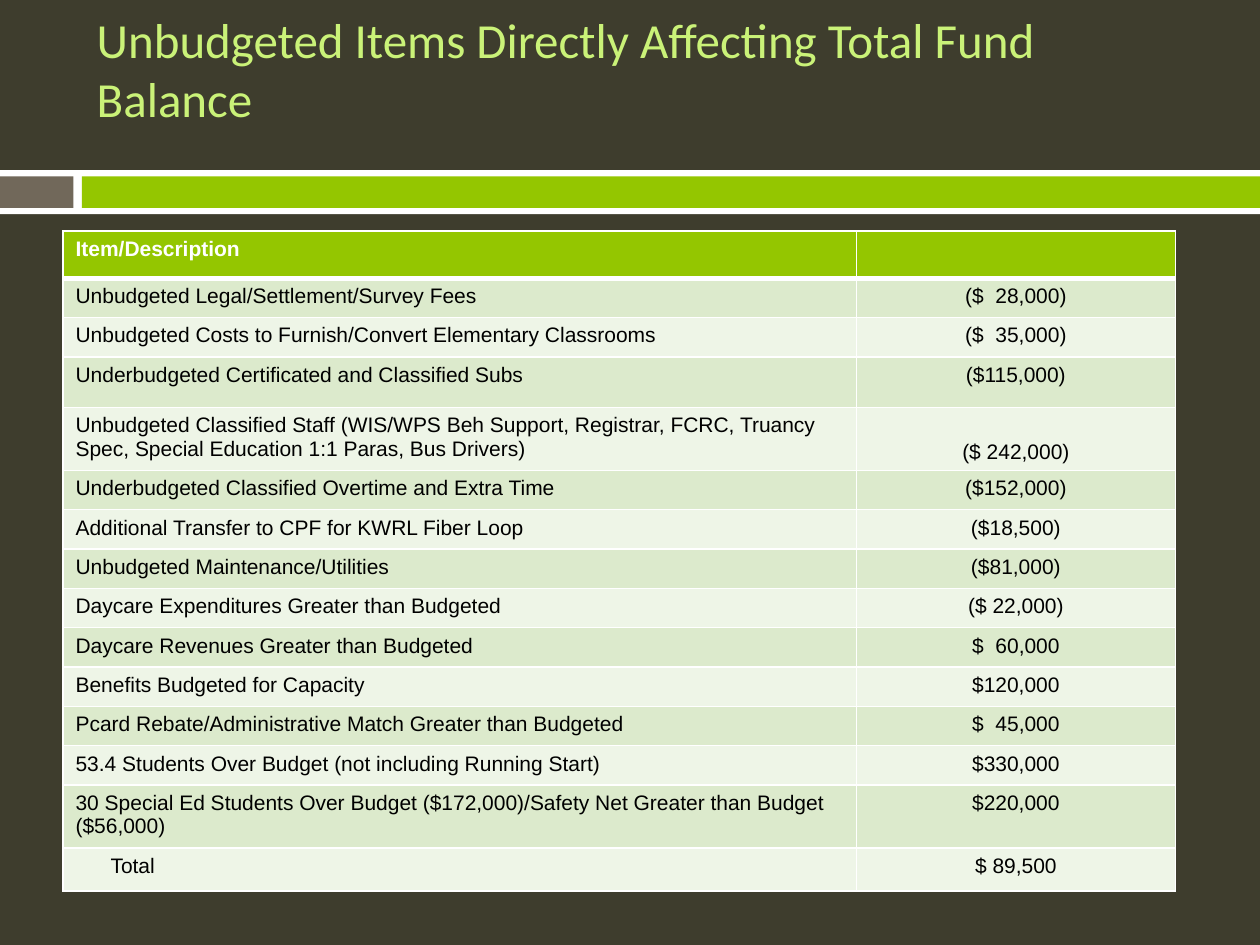
"""Build a slide listing unbudgeted items that affect the fund balance."""
from dataclasses import dataclass

from pptx import Presentation
from pptx.dml.color import RGBColor as Rgb
from pptx.enum.shapes import MSO_SHAPE as Kind
from pptx.enum.text import MSO_ANCHOR as Anchor, PP_ALIGN as Align
from pptx.oxml import parse_xml
from pptx.oxml.ns import nsdecls
from pptx.util import Pt

DARK, WHITE, BLACK = "3E3D2D", "FFFFFF", "000000"
GREEN, GREY, LIME = "94C600", "71685A", "CAF278"
BANDS = ("DCEACC", "EEF5E7")


@dataclass
class Bar:
    left: float
    top: float
    width: float
    height: float
    fill: str


@dataclass
class Item:
    label: str
    amount: str
    height: float = 22.5
    indent: float = 0
    anchor: Anchor = Anchor.TOP


BARS = [
    Bar(0, 97.2, 720, 25.2, WHITE),
    Bar(0, 100.8, 42, 18, GREY),
    Bar(46.8, 100.8, 673.2, 18, GREEN),
]
ITEMS = [
    Item("Unbudgeted Legal/Settlement/Survey Fees", "($  28,000)"),
    Item("Unbudgeted Costs to Furnish/Convert Elementary Classrooms", "($  35,000)"),
    Item("Underbudgeted Certificated and Classified Subs", "($115,000)", 28.8),
    Item("Unbudgeted Classified Staff (WIS/WPS Beh Support, Registrar, FCRC, Truancy "
         "Spec, Special Education 1:1 Paras, Bus Drivers)", "($ 242,000)", 35,
         anchor=Anchor.BOTTOM),
    Item("Underbudgeted Classified Overtime and Extra Time", "($152,000)"),
    Item("Additional Transfer to CPF for KWRL Fiber Loop", "($18,500)"),
    Item("Unbudgeted Maintenance/Utilities", "($81,000)"),
    Item("Daycare Expenditures Greater than Budgeted", "($ 22,000)"),
    Item("Daycare Revenues Greater than Budgeted", "$  60,000"),
    Item("Benefits Budgeted for Capacity", "$120,000"),
    Item("Pcard Rebate/Administrative Match Greater than Budgeted", "$  45,000"),
    Item("53.4 Students Over Budget (not including Running Start)", "$330,000"),
    Item("30 Special Ed Students Over Budget ($172,000)/Safety Net Greater than Budget "
         "($56,000)", "$220,000", 34),
    Item("Total", "$ 89,500", 24.5, indent=20),
]


def paint(target, color: str) -> None:
    target.solid()
    target.fore_color.rgb = Rgb.from_string(color)


def style(frame, face: str, size: float, color: str, bold: bool = False) -> None:
    for para in frame.paragraphs:
        for run in para.runs:
            run.font.name, run.font.size, run.font.bold = face, Pt(size), bold
            paint(run.font.fill, color)


def draw_bar(slide, bar: Bar) -> None:
    box = slide.shapes.add_shape(
        Kind.RECTANGLE, Pt(bar.left), Pt(bar.top), Pt(bar.width), Pt(bar.height))
    box.shadow.inherit = False
    box.line.fill.background()
    paint(box.fill, bar.fill)


def draw_title(slide, text: str) -> None:
    frame = slide.shapes.add_textbox(Pt(48.2), Pt(18), Pt(642.2), Pt(41.8)).text_frame
    frame.word_wrap = True
    frame.vertical_anchor = Anchor.MIDDLE
    frame.text = text
    style(frame, "Calibri", 28, LIME)


def edge(cell, side: str, width: float) -> None:
    cell._tc.get_or_add_tcPr().append(parse_xml(
        f'<a:ln{side} {nsdecls("a")} w="{Pt(width)}"><a:solidFill>'
        f'<a:srgbClr val="{WHITE}"/></a:solidFill></a:ln{side}>'))


def fill_cell(cell, text: str, fill: str, color: str, top: float = 1,
              base: float = 1, bold: bool = False) -> None:
    for side, width in (("L", 1), ("R", 1), ("T", top), ("B", base)):
        edge(cell, side, width)
    paint(cell.fill, fill)
    cell.text_frame.text = text
    cell.text_frame.paragraphs[0].font.size = Pt(12)
    style(cell.text_frame, "Arial", 12, color, bold)


def draw_table(slide, items: list[Item]) -> None:
    high = 27 + sum(item.height for item in items)
    table = slide.shapes.add_table(
        len(items) + 1, 2, Pt(36), Pt(132), Pt(635.8), Pt(high)).table
    for col, width in zip(table.columns, (453.3, 182.5)):
        col.width = Pt(width)
    table.rows[0].height = Pt(27)
    for col, text in enumerate(("Item/Description", "")):
        fill_cell(table.cell(0, col), text, GREEN, WHITE, base=3, bold=True)
    for row, item in enumerate(items, 1):
        table.rows[row].height = Pt(item.height)
        band, top = BANDS[(row - 1) % 2], 3 if row == 1 else 1
        label, amount = table.cell(row, 0), table.cell(row, 1)
        fill_cell(label, item.label, band, BLACK, top)
        fill_cell(amount, item.amount, band, BLACK, top)
        label.margin_left = Pt(7.2 + item.indent)
        amount.vertical_anchor = item.anchor
        amount.text_frame.paragraphs[0].alignment = Align.CENTER


def main() -> None:
    deck = Presentation()
    deck.slide_width, deck.slide_height = Pt(720), Pt(540)
    slide = deck.slides.add_slide(deck.slide_layouts[6])
    paint(slide.background.fill, DARK)
    for bar in BARS:
        draw_bar(slide, bar)
    draw_title(slide, "Unbudgeted Items Directly Affecting Total Fund Balance")
    draw_table(slide, ITEMS)
    deck.save("out.pptx")


if __name__ == "__main__":
    main()
